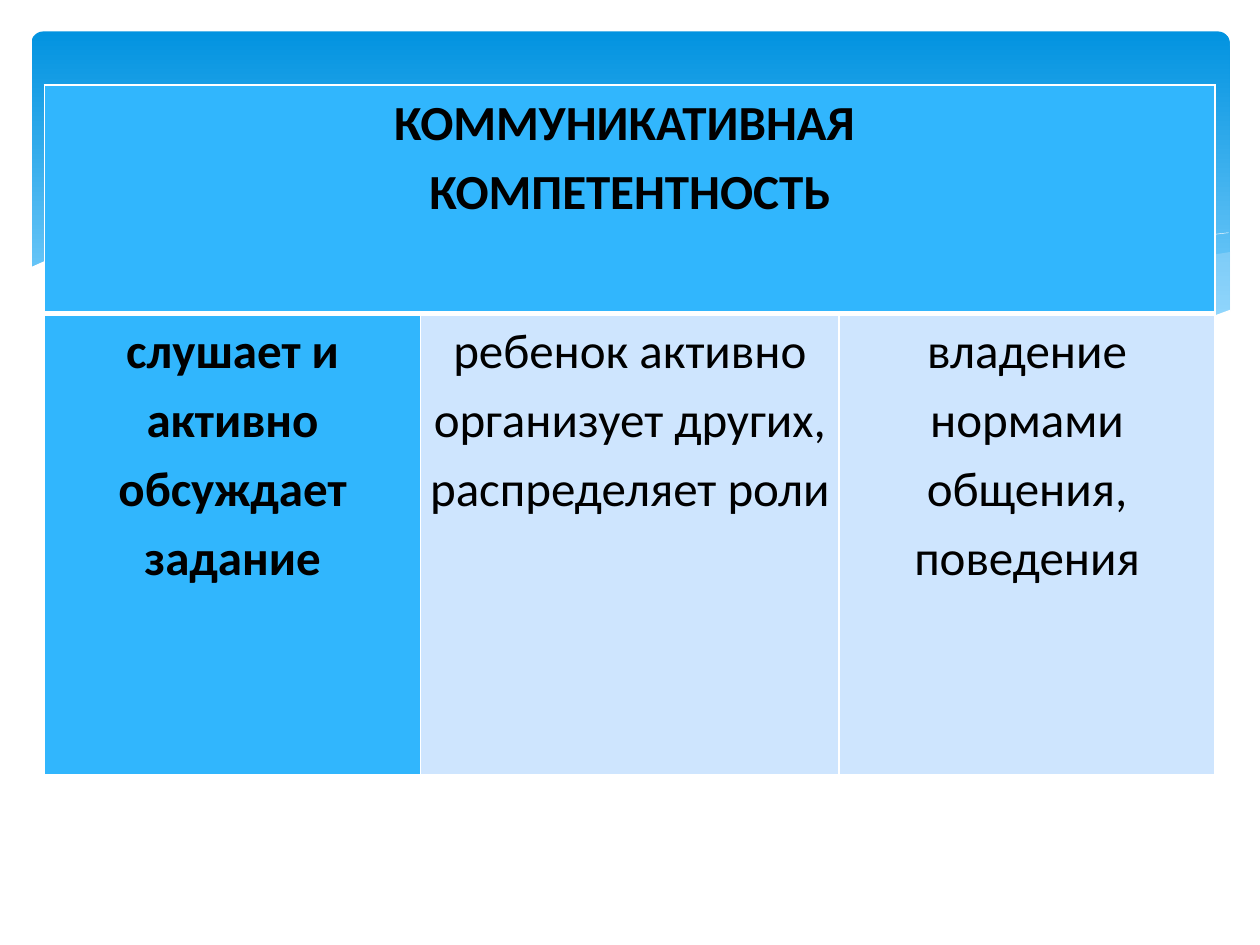
"""Build the communicative competence table slide."""
from lxml.etree import SubElement
from pptx import Presentation
from pptx.dml.color import RGBColor
from pptx.enum.shapes import MSO_SHAPE
from pptx.enum.text import PP_ALIGN
from pptx.oxml.ns import qn
from pptx.util import Pt

WHITE, BLUE, PALE = "FFFFFF", "31B6FD", "CEE5FE"
TITLE = ["КОММУНИКАТИВНАЯ ", "КОМПЕТЕНТНОСТЬ"]
SKILLS = [
    (["слушает и активно обсуждает задание"], BLUE, True),
    (["ребенок активно организует других, распределяет роли"], PALE, False),
    (["владение", "нормами общения, поведения"], PALE, False),
]
COLUMN_WIDTHS = [215, 239, 215]
ROW_HEIGHTS = [130.3, 263.5]
TABLE_LEFT, TABLE_TOP = 25.4, 48.7
PANEL = (18, 18, 684.7, 194.4)
PANEL_STOPS = [(0, "0293E0"), (0.9, "83D3FE")]
RIGHT_WAVE = [
    (702.7, 144), (673, 149), (620, 160.6), (561, 174), (476, 191),
    (508, 195), (554, 199), (593, 199.5), (634, 196.6), (668, 189.5),
    (702.7, 177.8),
]
CREST = [
    (441.4, 185), (484, 173.5), (538.6, 160.6), (580, 151), (623.5, 143.3),
    (655, 138.2), (684.7, 134.6), (702, 133.2),
]
WHITE_WAVE = [
    (703.4, 177.1), (684, 184.3), (655, 192.2), (612, 198), (571, 198.7),
    (523, 195.8), (467, 188.6), (400, 176.4), (322, 158.4), (263, 145.4),
    (210, 136.8), (166, 133.2), (127, 132.5), (95, 134), (68, 137.5),
    (42.5, 143.3), (26, 149), (16.6, 153.4), (16.6, 236.9), (703.4, 236.9),
]


def color(value):
    return RGBColor.from_string(value)


def add_panel(slide):
    panel = slide.shapes.add_shape(MSO_SHAPE.ROUNDED_RECTANGLE, *map(Pt, PANEL))
    panel.adjustments[0] = 0.034
    panel.shadow.inherit = False
    panel.line.fill.background()
    panel.fill.gradient()
    panel.fill.gradient_angle = 270
    for stop, (position, shade) in zip(panel.fill.gradient_stops, PANEL_STOPS):
        stop.position = position
        stop.color.rgb = color(shade)


def add_outline(slide, points, fill=None, opacity=100):
    builder = slide.shapes.build_freeform(*points[0], scale=Pt(1))
    builder.add_line_segments(points[1:], close=fill is not None)
    wave = builder.convert_to_shape()
    wave.shadow.inherit = False
    if fill is None:
        wave.fill.background()
        wave.line.color.rgb = color(WHITE)
        wave.line.width = Pt(0.25)
        return
    wave.line.fill.background()
    wave.fill.solid()
    wave.fill.fore_color.rgb = color(fill)
    if opacity < 100:
        shade = wave.fill._xPr.find(f".//{qn('a:srgbClr')}")
        SubElement(shade, qn("a:alpha"), val=str(opacity * 1000))


def add_borders(cell, widths):
    properties = cell._tc.get_or_add_tcPr()
    for side, width in zip("LRTB", widths):
        line = SubElement(properties, qn(f"a:ln{side}"), w=str(Pt(width)))
        fill = SubElement(line, qn("a:solidFill"))
        SubElement(fill, qn("a:srgbClr"), val=WHITE)


def fill_cell(cell, lines, shade, bold):
    cell.fill.solid()
    cell.fill.fore_color.rgb = color(shade)
    cell.margin_left = cell.margin_right = Pt(3.6)
    cell.margin_top = cell.margin_bottom = Pt(0)
    frame = cell.text_frame
    frame.text = "\n".join(lines)
    for paragraph in frame.paragraphs:
        paragraph.alignment = PP_ALIGN.CENTER
        paragraph.line_spacing = 1.15
        paragraph.font.name = "Calibri"
        paragraph.font.size = Pt(28)
        paragraph.font.bold = bold
        paragraph.font.color.rgb = color("000000")


def add_skill_table(slide):
    size = (sum(COLUMN_WIDTHS), sum(ROW_HEIGHTS))
    table = slide.shapes.add_table(
        len(ROW_HEIGHTS), len(COLUMN_WIDTHS),
        *map(Pt, (TABLE_LEFT, TABLE_TOP, *size))
    ).table
    for column, width in zip(table.columns, COLUMN_WIDTHS):
        column.width = Pt(width)
    for row, height in zip(table.rows, ROW_HEIGHTS):
        row.height = Pt(height)
    for index, skill in enumerate(SKILLS):
        add_borders(table.cell(0, index), (1, 1, 1, 3))
        add_borders(table.cell(1, index), (1, 1, 3, 1))
        fill_cell(table.cell(1, index), *skill)
    title = table.cell(0, 0)
    title.merge(table.cell(0, len(SKILLS) - 1))
    fill_cell(title, TITLE, BLUE, True)


def main():
    deck = Presentation()
    deck.slide_width, deck.slide_height = Pt(720), Pt(540)
    slide = deck.slides.add_slide(deck.slide_layouts[6])
    add_panel(slide)
    add_outline(slide, RIGHT_WAVE, "C6E7FC", 29)
    add_outline(slide, CREST)
    add_outline(slide, WHITE_WAVE, WHITE)
    add_skill_table(slide)
    deck.save("out.pptx")


if __name__ == "__main__":
    main()
